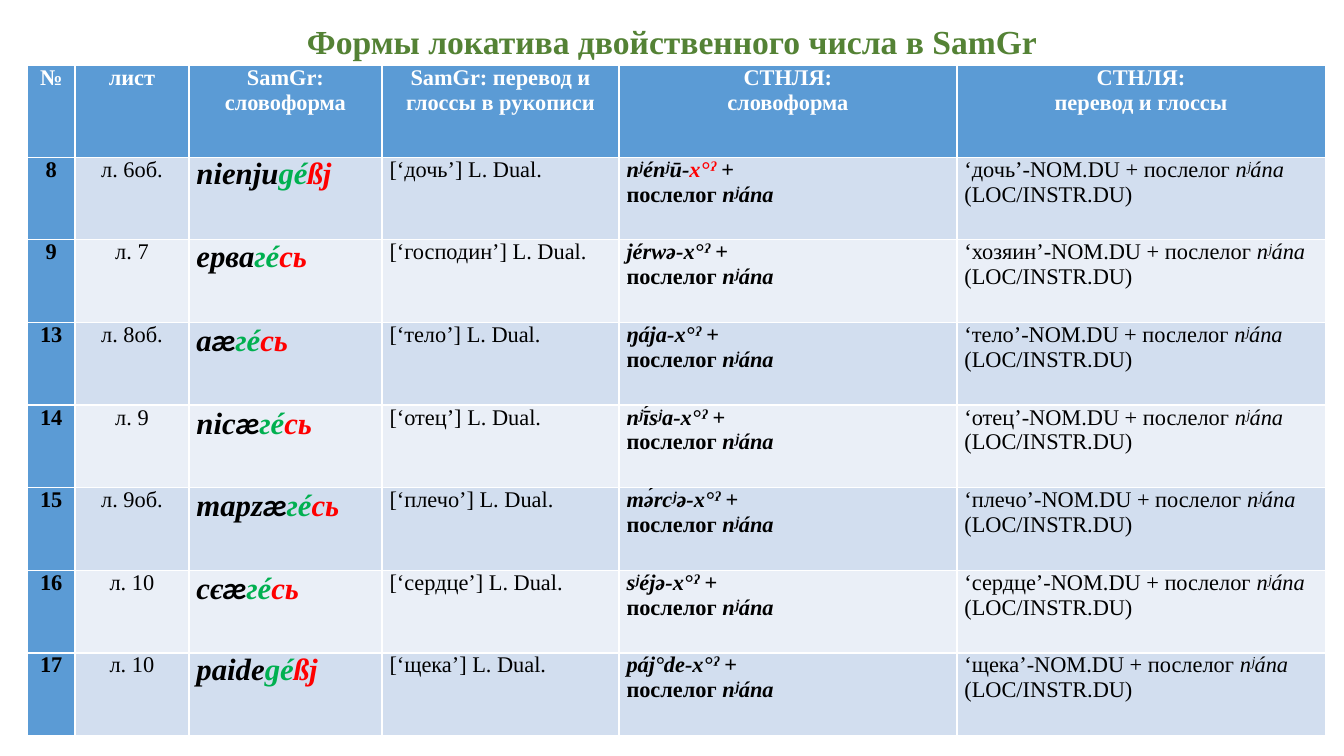
import pptx
import pptx.util
import pptx.dml.color
import pptx.enum.text

Pt = pptx.util.Pt
ALIGN = pptx.enum.text.PP_ALIGN
SERIF = "Times New Roman"
BLACK, WHITE, RED, GREEN = "000000", "FFFFFF", "FF0000", "00B050"
BLUE, BANDS = "5B9BD5", ("D2DEEF", "EAEFF7")


def color(hex_value):
    return pptx.dml.color.RGBColor.from_string(hex_value)


def fill_cell(cell, background, paragraphs, align=ALIGN.LEFT, size=16):
    """Each paragraph is a list of (text, style, colour); style holds b and i."""
    cell.fill.solid()
    cell.fill.fore_color.rgb = color(background)
    cell.margin_left = cell.margin_right = Pt(5.4)
    cell.margin_top = cell.margin_bottom = 0
    frame = cell.text_frame
    for index, pieces in enumerate(paragraphs):
        paragraph = frame.add_paragraph() if index else frame.paragraphs[0]
        paragraph.alignment = align
        for text, style, text_color in pieces:
            run = paragraph.add_run()
            run.text = text
            run.font.name = "Calibri" if text == "æ" else SERIF
            run.font.size = Pt(size)
            run.font.bold = "b" in style
            run.font.italic = "i" in style
            run.font.color.rgb = color(text_color)


presentation = pptx.Presentation()
presentation.slide_width, presentation.slide_height = Pt(960), Pt(540)
slide = presentation.slides.add_slide(presentation.slide_layouts[5])

# Title
title = slide.shapes.title
title.left, title.top, title.width, title.height = Pt(66), Pt(15.8), Pt(828), Pt(31)
title.text_frame.text = "Формы локатива двойственного числа в SamGr"
title.text_frame.vertical_anchor = pptx.enum.text.MSO_ANCHOR.MIDDLE
heading = title.text_frame.paragraphs[0]
heading.alignment = ALIGN.CENTER
heading.line_spacing = 0.9
heading.runs[0].font.name = SERIF
heading.runs[0].font.size = Pt(24)
heading.runs[0].font.bold = True
heading.runs[0].font.color.rgb = color("548235")

# Content: number, leaf, stem, ending, manuscript gloss, modern stem, modern gloss
latin, cyrillic = ("gé", "ßj"), ("гé", "сь")
headers = [
    ["№"],
    ["лист"],
    ["SamGr:", "cловоформа"],
    ["SamGr: перевод и глоссы в рукописи"],
    ["СТНЛЯ:", "cловоформа"],
    ["СТНЛЯ:", "перевод и глоссы"],
]
word_forms = [
    ("8", "л. 6об.", "nienju", latin, "дочь", "nʲénʲū-", "дочь"),
    ("9", "л. 7", "ерва", cyrillic, "господин", "jérwə-", "хозяин"),
    ("13", "л. 8об.", "аæ", cyrillic, "тело", "ŋája-", "тело"),
    ("14", "л. 9", "nicæ", cyrillic, "отец", "nʲī́sʲa-", "отец"),
    ("15", "л. 9об.", "mарzæ", cyrillic, "плечо", "mə́rcʲə-", "плечо"),
    ("16", "л. 10", "cєæ", cyrillic, "сердце", "sʲéjə-", "сердце"),
    ("17", "л. 10", "paide", latin, "щека", "páj°de-", "щека"),
]

# Table grid; white borders come from the default table style
column_widths = [34, 81.4, 137.9, 169.3, 241.4, 263]
header_height, row_height = 65.5, 59.04
table = slide.shapes.add_table(
    len(word_forms) + 1, len(headers), Pt(19.6), Pt(46.8),
    Pt(sum(column_widths)), Pt(header_height + row_height * len(word_forms)),
).table
table.first_col = True
for column, width in zip(table.columns, column_widths):
    column.width = Pt(width)
for index, row in enumerate(table.rows):
    row.height = Pt(row_height if index else header_height)

# Header row
for column, lines in enumerate(headers):
    fill_cell(table.cell(0, column), BLUE,
              [[(line, "b", WHITE)] for line in lines], ALIGN.CENTER)

# Word forms
for row, (number, leaf, stem, ending, gloss, modern, meaning) in enumerate(word_forms, 1):
    band = BANDS[(row - 1) % 2]
    fill_cell(table.cell(row, 0), BLUE, [[(number, "b", BLACK)]], ALIGN.CENTER)
    fill_cell(table.cell(row, 1), band, [[(leaf, "", BLACK)]], ALIGN.CENTER)

    base, ash, _ = stem.partition("æ")
    form = [(part, "bi", BLACK) for part in (base, ash) if part]
    form += [(ending[0], "bi", GREEN), (ending[1], "bi", RED)]
    fill_cell(table.cell(row, 2), band, [form], size=22)

    fill_cell(table.cell(row, 3), band, [[(f"[‘{gloss}’] L. Dual.", "", BLACK)]])

    dual_color = RED if row == 1 else BLACK
    fill_cell(table.cell(row, 4), band, [
        [(modern, "bi", BLACK), ("x°ˀ", "bi", dual_color), (" +", "b", BLACK)],
        [("послелог ", "b", BLACK), ("nʲána", "bi", BLACK)],
    ])
    fill_cell(table.cell(row, 5), band, [[
        (f"‘{meaning}’-NOM.DU + послелог ", "", BLACK),
        ("nʲána ", "i", BLACK),
        ("(LOC/INSTR.DU)", "", BLACK),
    ]])

presentation.save("out.pptx")
